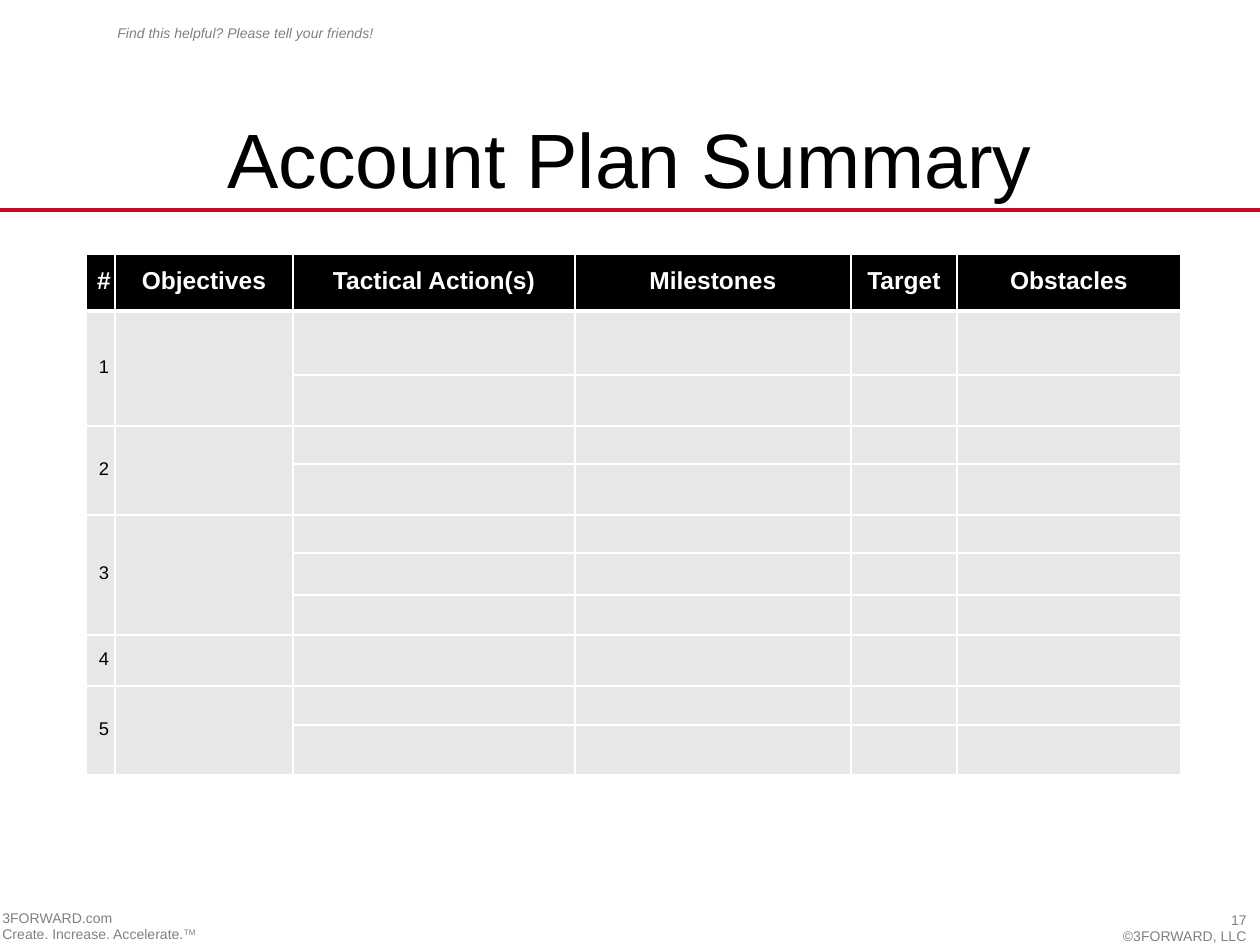
import pptx
import pptx.util
import pptx.dml.color
import pptx.enum.shapes
import pptx.enum.text
import pptx.oxml
import pptx.oxml.ns

COLORS = {"black": "000000", "white": "FFFFFF", "gray": "808080", "body": "E7E7E7", "rule": "C20A24"}
ALIGN = pptx.enum.text.PP_ALIGN
MIDDLE = pptx.enum.text.MSO_ANCHOR.MIDDLE


def px(value):
    return pptx.util.Emu(round(value * 914400 / 126))


def style(paragraph, size, color, align=ALIGN.LEFT, bold=False, italic=False):
    paragraph.alignment = align
    font = paragraph.font
    font.name = "Arial"
    font.size = pptx.util.Pt(size)
    font.bold = bold
    font.italic = italic
    font.color.rgb = pptx.dml.color.RGBColor.from_string(COLORS[color])


presentation = pptx.Presentation()
presentation.slide_width = px(1260)
presentation.slide_height = px(945)
slide = presentation.slides.add_slide(presentation.slide_layouts[6])

rule = slide.shapes.add_connector(
    pptx.enum.shapes.MSO_CONNECTOR.STRAIGHT, px(0), px(210), px(1260), px(210))
rule.line.color.rgb = pptx.dml.color.RGBColor.from_string(COLORS["rule"])
rule.line.width = pptx.util.Pt(2.25)
rule._element.spPr.append(pptx.oxml.parse_xml(
    f'<a:effectLst {pptx.oxml.ns.nsdecls("a")}/>'))

texts = [
    ((105, 18, 388, 30), ["Find this helpful? Please tell your friends!"], 8, "gray", ALIGN.LEFT, True),
    ((0, 105, 1260, 106), ["Account Plan Summary"], 44, "black", ALIGN.CENTER, False),
    ((965, 905, 294, 40), ["17", "©3FORWARD, LLC"], 8, "gray", ALIGN.RIGHT, False),
    ((-10, 903, 462, 47), ["3FORWARD.com", "Create. Increase. Accelerate."], 8, "gray", ALIGN.LEFT, False),
]
for box, lines, size, color, align, italic in texts:
    frame = slide.shapes.add_textbox(*map(px, box)).text_frame
    frame.word_wrap = True
    if size == 44:
        frame.vertical_anchor = MIDDLE
    frame.text = "\n".join(lines)
    for paragraph in frame.paragraphs:
        style(paragraph, size, color, align, italic=italic)

trademark = frame.paragraphs[-1].add_run()
trademark.text = "TM"
trademark._r.get_or_add_rPr().set("baseline", "30000")

headings = ["#", "Objectives", "Tactical Action(s)", "Milestones", "Target", "Obstacles"]
column_widths = [29, 178, 282, 276, 106, 224]
row_heights = [57, 64, 51, 38, 51, 38, 42, 40, 51, 39, 50]
objective_spans = [2, 2, 3, 1, 2]

plan = slide.shapes.add_table(
    len(row_heights), len(headings), px(86), px(254),
    px(sum(column_widths)), px(sum(row_heights))).table
plan.horz_banding = False
for column, width in zip(plan.columns, column_widths):
    column.width = px(width)
for row, height in zip(plan.rows, row_heights):
    row.height = px(height)

for column, heading in enumerate(headings):
    plan.cell(0, column).text = heading
start = 1
for number, span in enumerate(objective_spans, 1):
    plan.cell(start, 0).text = str(number)
    if span > 1:
        for column in range(2):
            plan.cell(start, column).merge(plan.cell(start + span - 1, column))
    start += span

for row in range(len(row_heights)):
    header = row == 0
    for column in range(len(headings)):
        cell = plan.cell(row, column)
        cell.vertical_anchor = MIDDLE
        cell.margin_top = cell.margin_bottom = px(0)
        if column == 0:
            cell.margin_left, cell.margin_right = px(11), px(4)
        for side in "LRTB":
            width = pptx.util.Pt(3 if (header and side == "B") or (row == 1 and side == "T") else 1)
            cell._tc.get_or_add_tcPr().append(pptx.oxml.parse_xml(
                f'<a:ln{side} {pptx.oxml.ns.nsdecls("a")} w="{width}"><a:solidFill>'
                f'<a:srgbClr val="{COLORS["white"]}"/></a:solidFill></a:ln{side}>'))
        cell.fill.solid()
        cell.fill.fore_color.rgb = pptx.dml.color.RGBColor.from_string(
            COLORS["black" if header else "body"])
        paragraph = cell.text_frame.paragraphs[0]
        paragraph.line_spacing = 0.8
        style(paragraph, 14 if header else 10.5, "white" if header else "black", ALIGN.CENTER, bold=header)

presentation.save("out.pptx")
